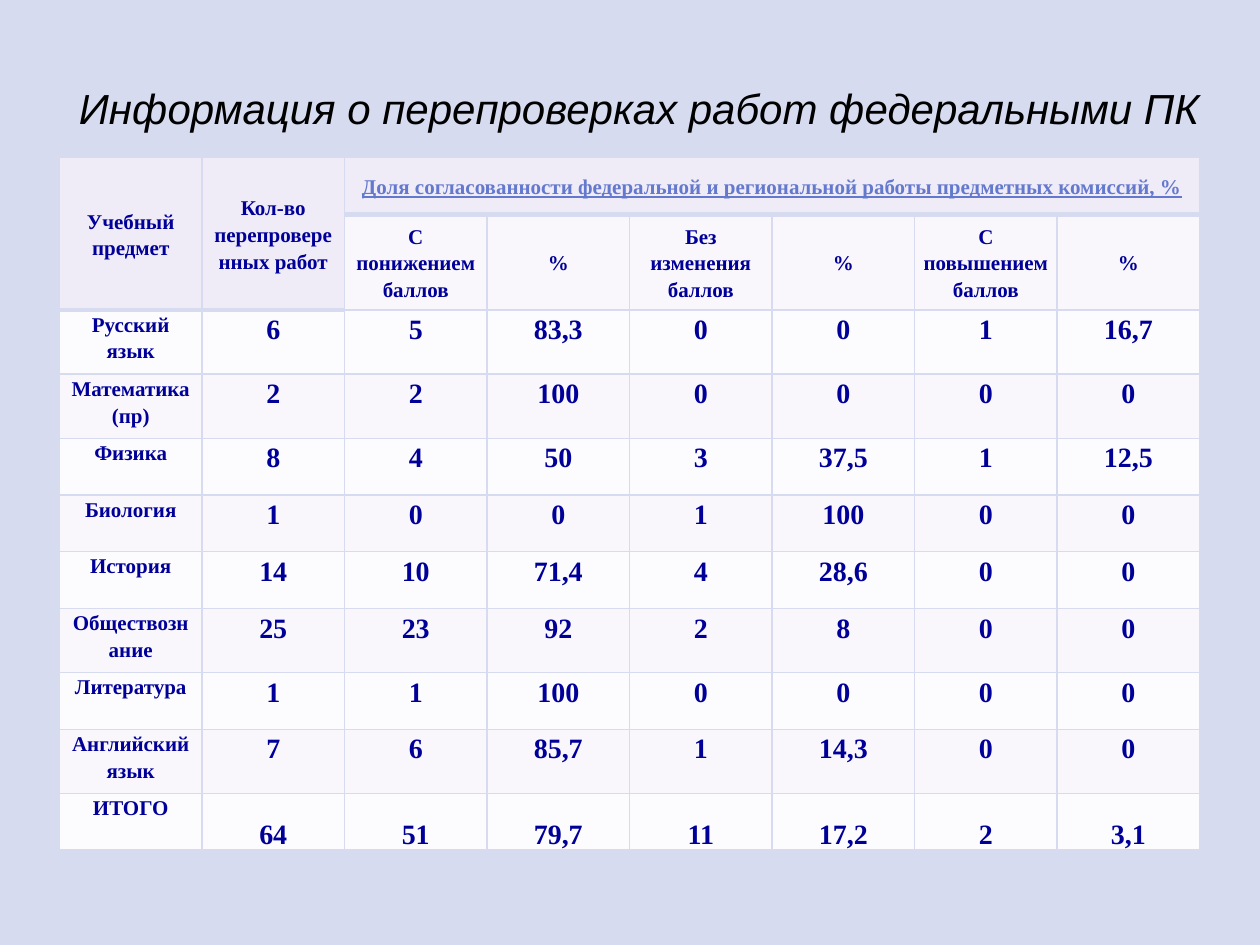
from dataclasses import dataclass

from lxml import etree
from pptx import Presentation
from pptx.dml.color import RGBColor
from pptx.enum import text as t
from pptx.oxml import ns
from pptx.util import Pt


@dataclass(frozen=True)
class Theme:
    back: str = "D6DBEF"
    head: str = "EFEBF7"
    even: str = "FCFBFD"
    odd: str = "F9F7FC"
    ink: str = "000099"
    link: str = "6379CE"
    black: str = "000000"
    sans: str = "Arial"
    serif: str = "Times New Roman"
    title: int = 24
    label: int = 12
    value: int = 16


THEME = Theme()

HEADS = [
    ["Учебный предмет", "Кол-во перепроверенных работ",
     "Доля согласованности федеральной и региональной работы предметных комиссий, %",
     "", "", "", "", ""],
    ["", "", "С понижением баллов", "%", "Без изменения баллов", "%",
     "С повышением баллов", "%"],
]
MARKS = [
    ["Русский язык", "6", "5", "83,3", "0", "0", "1", "16,7"],
    ["Математика (пр)", "2", "2", "100", "0", "0", "0", "0"],
    ["Физика", "8", "4", "50", "3", "37,5", "1", "12,5"],
    ["Биология", "1", "0", "0", "1", "100", "0", "0"],
    ["История", "14", "10", "71,4", "4", "28,6", "0", "0"],
    ["Обществознание", "25", "23", "92", "2", "8", "0", "0"],
    ["Литература", "1", "1", "100", "0", "0", "0", "0"],
    ["Английский язык", "7", "6", "85,7", "1", "14,3", "0", "0"],
    ["ИТОГО", "64", "51", "79,7", "11", "17,2", "2", "3,1"],
]
TWO_LINE = {"Русский язык", "Математика (пр)", "Обществознание", "Английский язык"}


def rgb(code):
    return RGBColor.from_string(code)


def style(para, face, size, color):
    para.alignment = t.PP_ALIGN.CENTER
    for run in para.runs:
        run.font.name, run.font.size = face, Pt(size)
        run.font.color.rgb = rgb(color)


def border(cell, base):
    """Draw the four cell edges, the lower one base points wide."""
    props = cell._tc.get_or_add_tcPr()
    for side, width in zip("LRTB", (1, 1, 1, base)):
        line = etree.SubElement(props, ns.qn(f"a:ln{side}"), w=str(Pt(width)))
        fill = etree.SubElement(line, ns.qn("a:solidFill"))
        etree.SubElement(fill, ns.qn("a:srgbClr"), val=THEME.back)


def fill_cell(cell, words, fill, size, anchor, base=1):
    border(cell, base)
    cell.fill.solid()
    cell.fill.fore_color.rgb = rgb(fill)
    cell.margin_left = cell.margin_right = Pt(5)
    cell.margin_top = cell.margin_bottom = 0
    cell.vertical_anchor = anchor
    cell.text_frame.text = words
    para = cell.text_frame.paragraphs[0]
    para.line_spacing = 1.15
    style(para, THEME.serif, size, THEME.ink)
    para.font.size = Pt(size)
    for run in para.runs:
        run.font.bold = True
    return para


def add_title(slide, box, words):
    shape = slide.shapes.title
    shape.left, shape.top, shape.width, shape.height = map(Pt, box)
    frame = shape.text_frame
    frame.text = words
    frame.word_wrap = True
    frame.auto_size = t.MSO_AUTO_SIZE.NONE
    frame.vertical_anchor = t.MSO_ANCHOR.BOTTOM
    frame.margin_bottom = Pt(9)
    para = frame.paragraphs[0]
    style(para, THEME.sans, THEME.title, THEME.black)
    para.runs[0].font.italic = True


def add_grid(slide, box, heads, marks):
    count = len(heads[0])
    shape = slide.shapes.add_table(len(heads) + len(marks), count, *map(Pt, box))
    grid = shape.table
    grid.first_row = grid.horz_banding = False
    for col in grid.columns:
        col.width = Pt(box[2] / count)
    highs = [32.4, 54.7] + [36.7 if row[0] in TWO_LINE else 32.4 for row in marks]
    for row, high in zip(grid.rows, highs):
        row.height = Pt(high)

    for r, row in enumerate(heads):
        for c, words in enumerate(row):
            top = r == 0 or c < 2
            para = fill_cell(grid.cell(r, c), words, THEME.head if top else THEME.odd,
                             THEME.label, t.MSO_ANCHOR.MIDDLE, 3 if top else 1)
            if r == 0 and c == 2:
                para.runs[0].font.underline = True
                para.runs[0].font.color.rgb = rgb(THEME.link)
    for c in range(2):
        grid.cell(0, c).merge(grid.cell(1, c))
    grid.cell(0, 2).merge(grid.cell(0, count - 1))

    for r, row in enumerate(marks):
        for c, words in enumerate(row):
            total = row is marks[-1] and c > 0
            para = fill_cell(grid.cell(r + len(heads), c), words,
                             THEME.odd if r % 2 else THEME.even,
                             THEME.value if c else THEME.label,
                             t.MSO_ANCHOR.BOTTOM if total else t.MSO_ANCHOR.TOP)
            if total:
                para.space_after = Pt(10)


def main():
    deck = Presentation()
    deck.slide_width, deck.slide_height = Pt(720), Pt(540)
    slide = deck.slides.add_slide(deck.slide_layouts[5])
    slide.background.fill.solid()
    slide.background.fill.fore_color.rgb = rgb(THEME.back)
    add_title(slide, (20, 21.6, 690.5, 63.4),
              "Информация о перепроверках работ федеральными ПК")
    add_grid(slide, (34, 90, 651.6, 396), HEADS, MARKS)
    deck.save("out.pptx")


if __name__ == "__main__":
    main()
